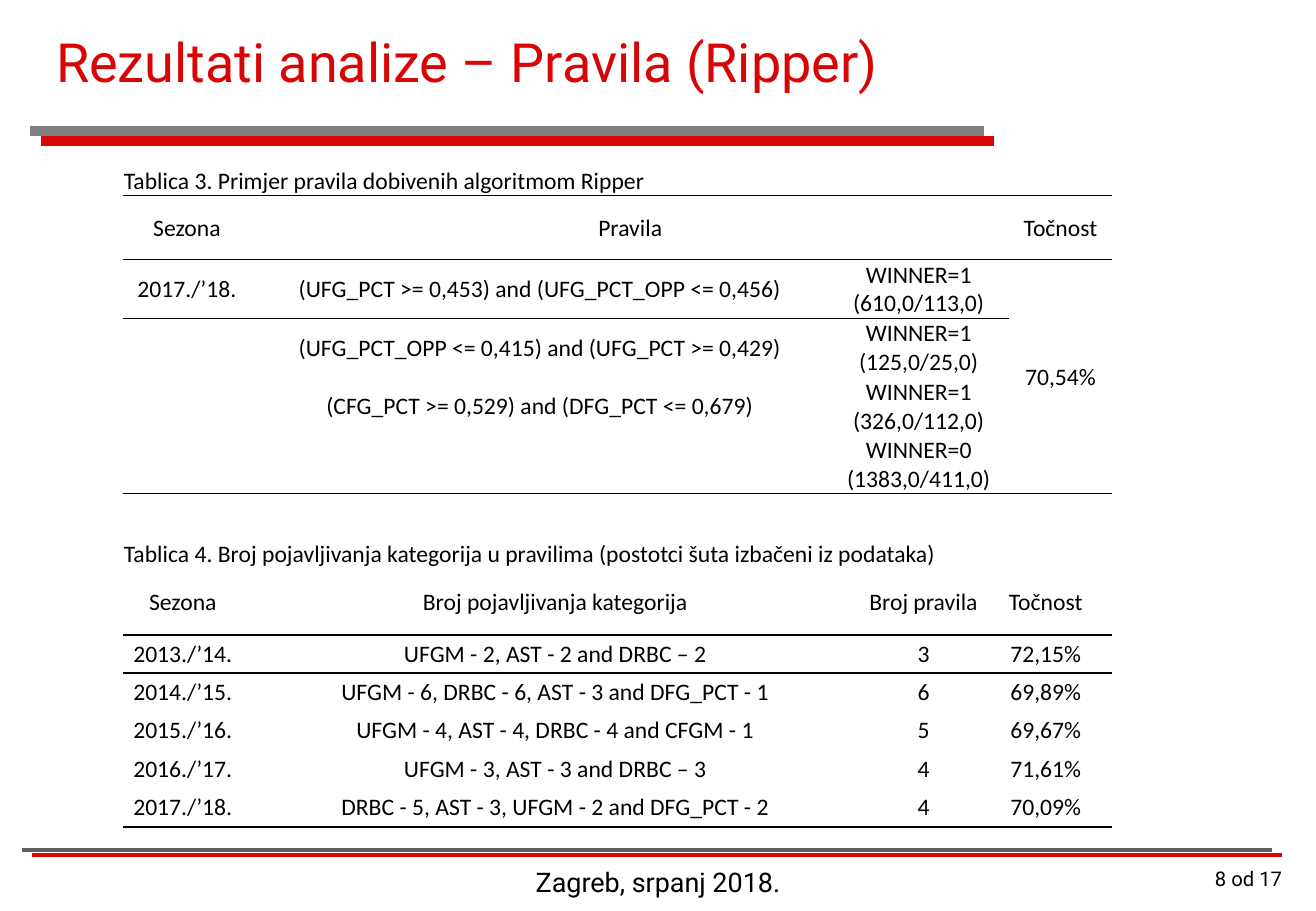
from lxml import etree
from pptx import Presentation
from pptx.dml.color import RGBColor
from pptx.enum import shapes, text
from pptx.oxml import ns
from pptx.util import Pt

RED = RGBColor(0xD7, 0x05, 0x05)
GRAY = RGBColor(0x80, 0x80, 0x80)
DARK_GRAY = RGBColor(0x5F, 0x5F, 0x5F)
BLACK = RGBColor(0, 0, 0)

NO_GRID_STYLE = "{2D5ABB26-0587-4C30-8999-92F81FD0307C}"
ALIGN = text.PP_ALIGN
ANCHOR = text.MSO_ANCHOR

RULES = [
    ["Tablica 3. Primjer pravila dobivenih algoritmom Ripper", "", "", ""],
    ["Sezona", "Pravila", "", "Točnost"],
    ["2017./’18.", "(UFG_PCT >= 0,453) and (UFG_PCT_OPP <= 0,456)",
     "WINNER=1 (610,0/113,0)", "70,54%"],
    ["", "(UFG_PCT_OPP <= 0,415) and (UFG_PCT >= 0,429)", "WINNER=1 (125,0/25,0)", ""],
    ["", "(CFG_PCT >= 0,529) and (DFG_PCT <= 0,679)", "WINNER=1 (326,0/112,0)", ""],
    ["", "", "WINNER=0 (1383,0/411,0)", ""],
]
CATEGORIES = [
    ["Tablica 4. Broj pojavljivanja kategorija u pravilima (postotci šuta izbačeni iz podataka)",
     "", "", ""],
    ["Sezona", "Broj pojavljivanja kategorija", "Broj pravila", "Točnost"],
    ["2013./’14.", "UFGM - 2, AST - 2 and DRBC – 2", "3", "72,15%"],
    ["2014./’15.", "UFGM - 6, DRBC - 6, AST - 3 and DFG_PCT - 1", "6", "69,89%"],
    ["2015./’16.", "UFGM - 4, AST - 4, DRBC - 4 and CFGM - 1", "5", "69,67%"],
    ["2016./’17.", "UFGM - 3, AST - 3 and DRBC – 3", "4", "71,61%"],
    ["2017./’18.", "DRBC - 5, AST - 3, UFGM - 2 and DFG_PCT - 2", "4", "70,09%"],
]


def assign(target, values):
    for name, value in values.items():
        setattr(target, name, value)


def add_border(cell, side, width):
    line = etree.SubElement(cell._tc.get_or_add_tcPr(), ns.qn(f"a:ln{side}"), w=str(Pt(width)))
    fill = etree.SubElement(line, ns.qn("a:solidFill"))
    etree.SubElement(fill, ns.qn("a:srgbClr"), val=str(BLACK))


class Page:
    heading_font = "Roboto"
    table_font = "Calibri"

    def __init__(self, deck):
        self.page = deck.slides.add_slide(deck.slide_layouts[5])

    def add_words(self, frame, words, size, font, color=BLACK, align=ALIGN.LEFT):
        para = frame.paragraphs[0]
        para.alignment = align
        span = para.add_run()
        span.text = words
        assign(span.font, {"size": Pt(size), "name": font})
        span.font.color.rgb = color

    def title(self, words, left, top, width, height):
        box = self.page.shapes.title
        assign(box, {"left": Pt(left), "top": Pt(top), "width": Pt(width), "height": Pt(height)})
        assign(box.text_frame, {"vertical_anchor": ANCHOR.MIDDLE, "word_wrap": True,
                                "auto_size": text.MSO_AUTO_SIZE.NONE})
        self.add_words(box.text_frame, words, 32, self.heading_font, RED)

    def label(self, words, left, top, width, height, size, align):
        box = self.page.shapes.add_textbox(Pt(left), Pt(top), Pt(width), Pt(height))
        box.text_frame.word_wrap = True
        self.add_words(box.text_frame, words, size, self.heading_font, align=align)

    def rule(self, start, end, y, color, width, distance, angle):
        """Draw a horizontal line with a sharp red shadow."""
        line = self.page.shapes.add_connector(
            shapes.MSO_CONNECTOR.STRAIGHT, Pt(start), Pt(y), Pt(end), Pt(y))
        line.line.color.rgb = color
        line.line.width = Pt(width)
        effects = etree.SubElement(line._element.spPr, ns.qn("a:effectLst"))
        shadow = etree.SubElement(effects, ns.qn("a:outerShdw"), dist=str(Pt(distance)),
                                  dir=str(angle * 60000), algn="ctr", rotWithShape="0")
        etree.SubElement(shadow, ns.qn("a:srgbClr"), val=str(RED))

    def table(self, left, top, widths, heights, rows, merges, ruled, border):
        """Draw a table whose first row is its caption, with lines below the ruled rows."""
        frame = self.page.shapes.add_table(len(heights), len(widths), Pt(left), Pt(top),
                                           Pt(sum(widths)), Pt(sum(heights)))
        grid = frame.table
        assign(grid, {"first_row": False, "horz_banding": False})
        grid._tbl.tblPr.find(ns.qn("a:tableStyleId")).text = NO_GRID_STYLE
        for column, width in zip(grid.columns, widths):
            column.width = Pt(width)
        for row, height in zip(grid.rows, heights):
            row.height = Pt(height)
        for first, last in merges:
            grid.cell(*first).merge(grid.cell(*last))
        for r, row in enumerate(rows):
            for c, words in enumerate(row):
                cell = grid.cell(r, c)
                caption = r == 0
                assign(cell, {"margin_left": Pt(0.7), "margin_right": Pt(0.7),
                              "margin_top": Pt(0.7), "margin_bottom": 0,
                              "vertical_anchor": ANCHOR.BOTTOM if caption else ANCHOR.MIDDLE})
                if r - 1 in ruled:
                    add_border(cell, "T", border)
                if r + cell.span_height - 1 in ruled:
                    add_border(cell, "B", border)
                cell.fill.background()
                if words:
                    self.add_words(cell.text_frame, words, 14, self.table_font,
                                   align=ALIGN.LEFT if caption else ALIGN.CENTER)


def main():
    deck = Presentation()
    assign(deck, {"slide_width": Pt(780), "slide_height": Pt(540)})
    page = Page(deck)
    page.rule(583.2, 18, 77.8, GRAY, 6, 8.5, 45)
    page.rule(753.8, 13, 504, DARK_GRAY, 2.25, 6.7, 27)
    page.title("Rezultati analize – Pravila (Ripper)", 26, 0, 514, 72)
    page.label("Zagreb, srpanj 2018.", 288, 509.8, 204, 30, 16, ALIGN.CENTER)
    page.label("8 od 17", 604, 509.8, 163, 30, 12, ALIGN.RIGHT)

    caption_merge = ((0, 0), (0, 3))
    page.table(72.7, 97.2, [76.3, 342, 107.1, 61], [18.7, 38] + [34.7] * 4, RULES,
               [caption_merge, ((1, 1), (1, 2)), ((2, 3), (5, 3))], {0, 1, 5}, 0.5)
    page.table(72.7, 314.6, [71.3, 370.2, 66.4, 78.5], [22.4, 39.4] + [22.6] * 4 + [23.6],
               CATEGORIES, [caption_merge], {1, 6}, 1)
    deck.save("out.pptx")


if __name__ == "__main__":
    main()
